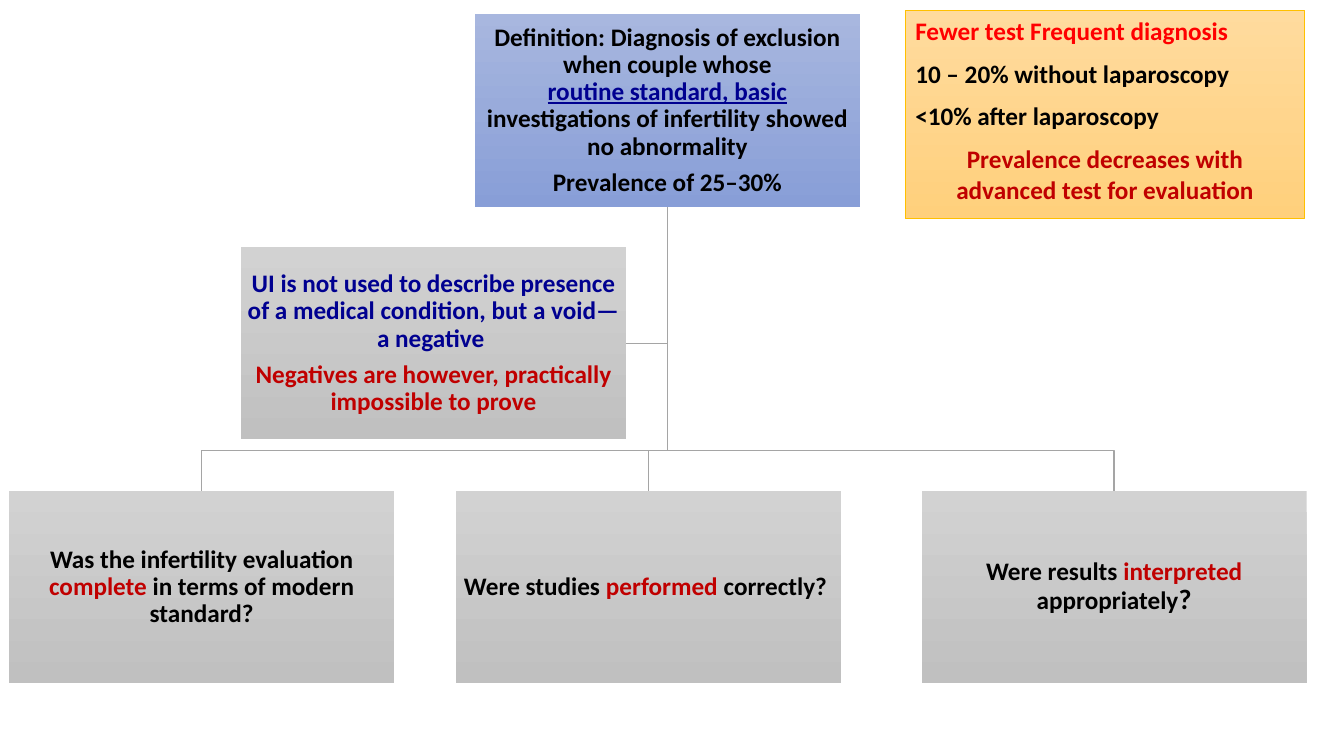
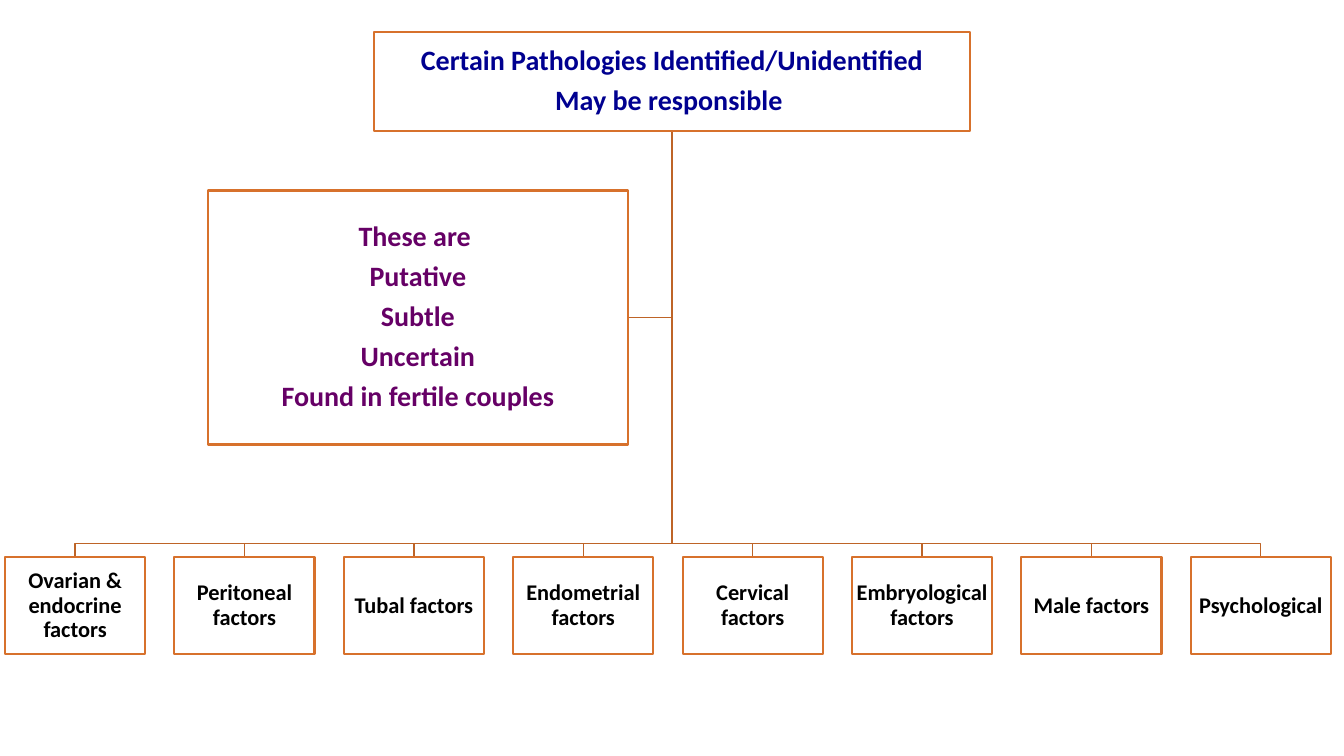
from pptx import Presentation
from pptx.dml.color import RGBColor
from pptx.enum.shapes import MSO_SHAPE
from pptx.enum.text import MSO_ANCHOR, PP_ALIGN
from pptx.util import Inches, Pt

RECTANGLE = MSO_SHAPE.RECTANGLE
MIDDLE, TOP = MSO_ANCHOR.MIDDLE, MSO_ANCHOR.TOP
CENTER, LEFT = PP_ALIGN.CENTER, PP_ALIGN.LEFT

FONT = "Calibri"
BREAK = ("", None)  # line break inside a paragraph
COLORS = {
    "black": "000000", "white": "FFFFFF", "navy": "000090", "purple": "660066",
    "crimson": "C00000", "red": "FF0000",
    "gray line": "A5A5A5", "brown line": "BE6427",
    "orange border": "D7712C", "gold border": "FFC000",
}
GRADIENTS = {
    "blue": ("A8B7DF", "889ED7"),
    "gray": ("D2D2D2", "C0C0C0"),
    "gold": ("FFDB9E", "FFD07C"),
}


def rgb(name):
    return RGBColor.from_string(COLORS[name])


def add_box(slide, left, top, width, height, gradient=None, border=None, border_width=1.5):
    """Rectangle with a vertical gradient, or white when none is named."""
    shape = slide.shapes.add_shape(
        RECTANGLE, Inches(left), Inches(top), Inches(width), Inches(height))
    shape.shadow.inherit = False
    if gradient:
        shape.fill.gradient()
        shape.fill.gradient_angle = 270
        for stop, color in zip(shape.fill.gradient_stops, GRADIENTS[gradient]):
            stop.color.rgb = RGBColor.from_string(color)
    else:
        shape.fill.solid()
        shape.fill.fore_color.rgb = rgb("white")
    if border:
        shape.line.color.rgb = rgb(border)
        shape.line.width = Pt(border_width)
    else:
        shape.line.fill.background()
    return shape


def add_runs(paragraph, runs, size):
    """Each run is (text, color) with an optional dict of font settings."""
    for text, color, *settings in runs:
        if color is None:
            paragraph.add_line_break()
            continue
        run = paragraph.add_run()
        run.text = text
        run.font.name = FONT
        run.font.size = Pt(size)
        run.font.bold = True
        run.font.color.rgb = rgb(color)
        for name, value in (settings[0] if settings else {}).items():
            setattr(run.font, name, value)


def paragraphs_of(frame, count):
    return [frame.paragraphs[0]] + [frame.add_paragraph() for _ in range(count - 1)]


def write_node(shape, contents, size):
    """Centred text of a box in the chart; contents is a list of run lists."""
    frame = shape.text_frame
    frame.word_wrap = True
    frame.vertical_anchor = MIDDLE
    frame.margin_left = frame.margin_right = Inches(0.01)
    frame.margin_top = frame.margin_bottom = Inches(0.01)
    for paragraph, runs in zip(paragraphs_of(frame, len(contents)), contents):
        paragraph.alignment = CENTER
        paragraph.line_spacing = 0.9
        paragraph.space_after = Pt(0.35 * size)
        add_runs(paragraph, runs, size)


def write_note(shape, lines, size):
    """Lines of the side note, each (text, color, alignment)."""
    frame = shape.text_frame
    frame.word_wrap = True
    frame.vertical_anchor = TOP
    for index, (paragraph, line) in enumerate(zip(paragraphs_of(frame, len(lines)), lines)):
        text, color, alignment = line
        paragraph.alignment = alignment
        if index:
            paragraph.space_before = Pt(0.5 * size)
        add_runs(paragraph, [(text, color)], size)


def add_elbow(slide, points, color):
    """Open angled line through the points, placed behind the boxes."""
    builder = slide.shapes.build_freeform(*points[0])
    builder.add_line_segments(points[1:], close=False)
    elbow = builder.convert_to_shape()
    elbow.shadow.inherit = False
    elbow.fill.background()
    elbow.line.color.rgb = rgb(color)
    elbow.line.width = Pt(1)
    slide.shapes._spTree.insert(2, elbow._element)


def center_x(shape):
    return shape.left + shape.width // 2


def connect_tree(slide, root, side, leaves, rail_top, color):
    """Elbows from the root to every leaf, by way of the rail, and to the side box."""
    trunk_x, rail_y = center_x(root), Inches(rail_top)
    start = (trunk_x, root.top + root.height)
    for leaf in leaves:
        leaf_x = center_x(leaf)
        add_elbow(slide, [start, (trunk_x, rail_y), (leaf_x, rail_y), (leaf_x, leaf.top)], color)
    side_y = side.top + side.height // 2
    add_elbow(slide, [start, (trunk_x, side_y), (side.left + side.width, side_y)], color)


def build_definition_slide(slide):
    size, width, height = 18, 3.82, 1.91
    root = add_box(slide, 4.71, 0.14, width, height, "blue")
    write_node(root, [
        [("Definition: Diagnosis of exclusion when couple whose", "black"), BREAK,
         ("routine standard, basic", "navy", {"underline": True}), BREAK,
         ("investigations of infertility showed no abnormality", "black")],
        [("Prevalence of 25–30%", "black")],
    ], size)

    questions = [
        (0.09, [("Was the infertility evaluation ", "black"), ("complete", "crimson"),
                (" in terms of modern standard?", "black")]),
        (4.52, [("Were studies ", "black"), ("performed ", "crimson"),
                ("correctly? ", "black")]),
        (9.14, [("Were results ", "black"), ("interpreted ", "crimson"),
                ("appropriately", "black"), ("?", "black", {"size": Pt(20)})]),
    ]
    leaves = []
    for left, runs in questions:
        leaf = add_box(slide, left, 4.87, width, height, "gray")
        write_node(leaf, [runs], size)
        leaves.append(leaf)

    side = add_box(slide, 2.39, 2.45, width, height, "gray")
    write_node(side, [
        [("UI is not used to describe presence of a medical condition, "
          "but a void—a negative ", "navy")],
        [("Negatives are however, practically impossible to prove", "crimson")],
    ], size)
    connect_tree(slide, root, side, leaves, 4.47, "gray line")

    note = add_box(slide, 8.98, 0.1, 3.96, 2.07, "gold", "gold border", 0.5)
    write_note(note, [
        ("Fewer test Frequent diagnosis", "red", LEFT),
        ("10 – 20% without laparoscopy", "black", LEFT),
        ("<10% after laparoscopy", "black", LEFT),
        ("Prevalence decreases with advanced test for evaluation", "crimson", CENTER),
    ], size)


def build_pathologies_slide(slide):
    border = "orange border"
    root = add_box(slide, 3.71, 0.32, 5.91, 0.98, border=border)
    write_node(root, [
        [("Certain Pathologies Identified/Unidentified", "navy")],
        [("May be responsible ", "navy")],
    ], 20)

    factors = ["Ovarian & endocrine factors", "Peritoneal factors", "Tubal factors",
               "Endometrial factors", "Cervical factors", "Embryological factors",
               "Male factors", "Psychological"]
    leaves = []
    for index, factor in enumerate(factors):
        leaf = add_box(slide, 0.05 + 1.68 * index, 5.53, 1.39, 0.96, border=border)
        write_node(leaf, [[(factor, "black")]], 16)
        leaves.append(leaf)

    side = add_box(slide, 2.06, 1.89, 4.17, 2.52, border=border)
    traits = ["These are ", "Putative", "Subtle", "Uncertain", "Found in fertile couples"]
    write_node(side, [[(trait, "purple")] for trait in traits], 20)
    connect_tree(slide, root, side, leaves, 5.39, "brown line")


def main():
    presentation = Presentation()
    presentation.slide_width = Inches(13.33)
    presentation.slide_height = Inches(7.5)
    blank = presentation.slide_layouts[6]
    for build in (build_definition_slide, build_pathologies_slide):
        build(presentation.slides.add_slide(blank))
    presentation.save("out.pptx")


if __name__ == "__main__":
    main()
